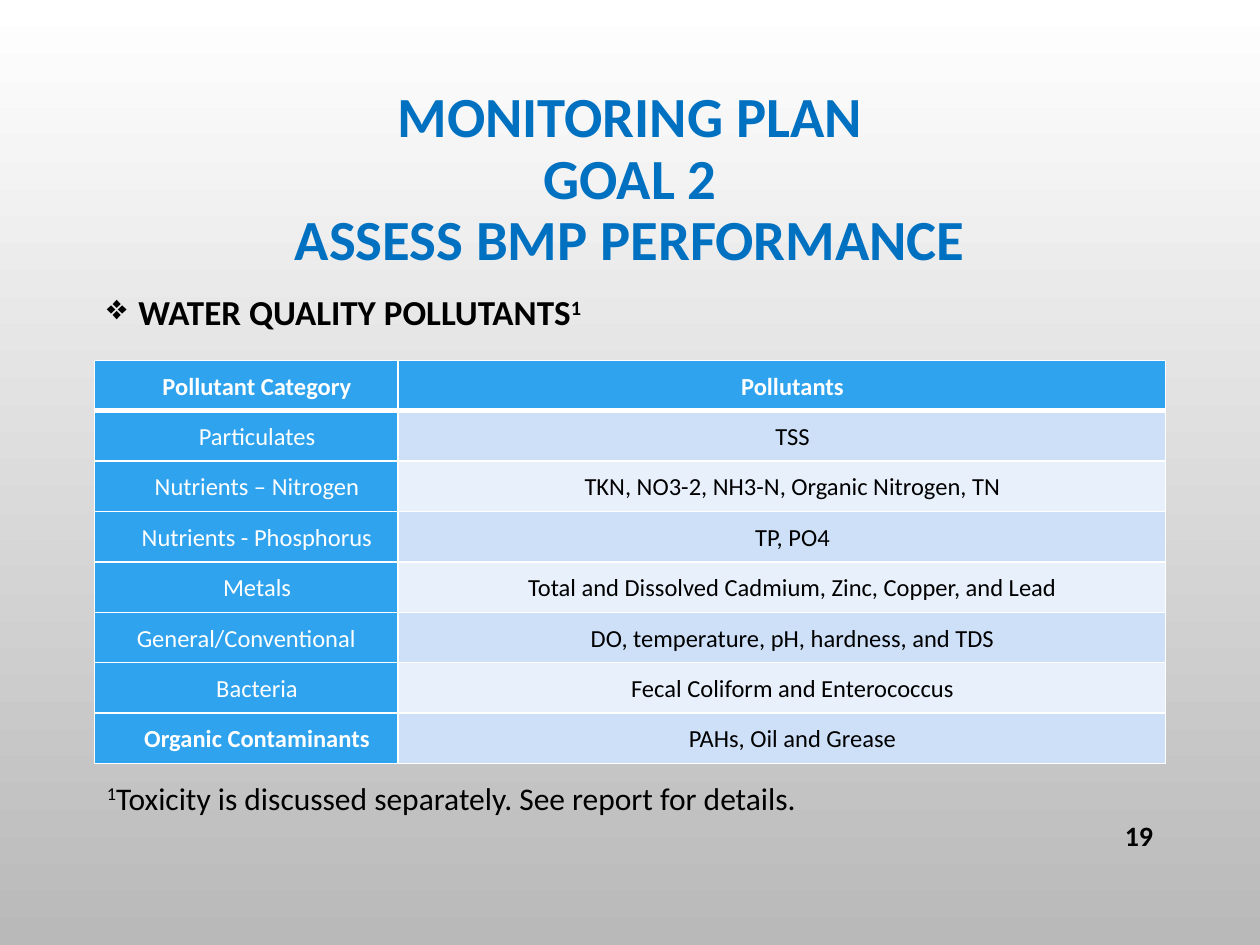
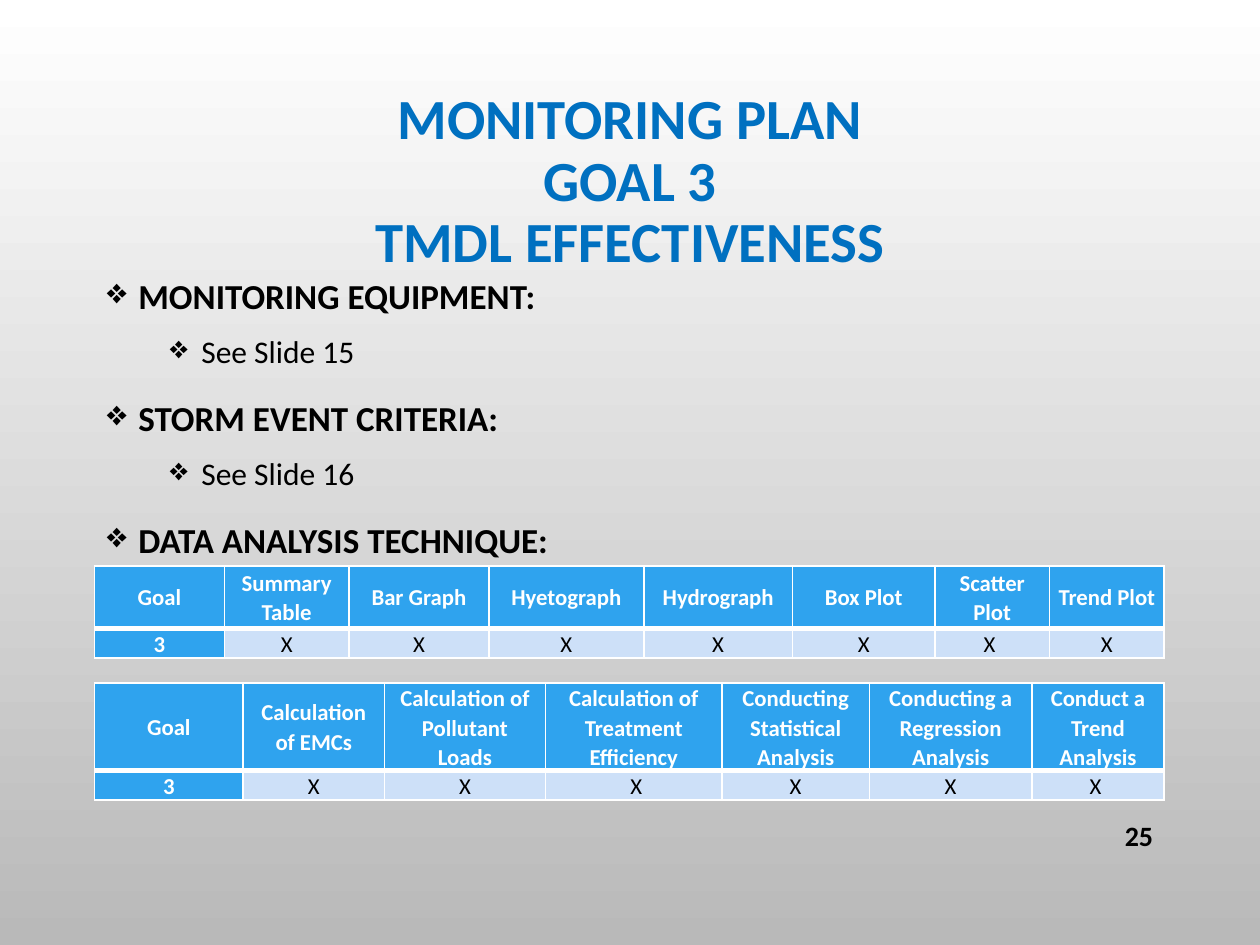
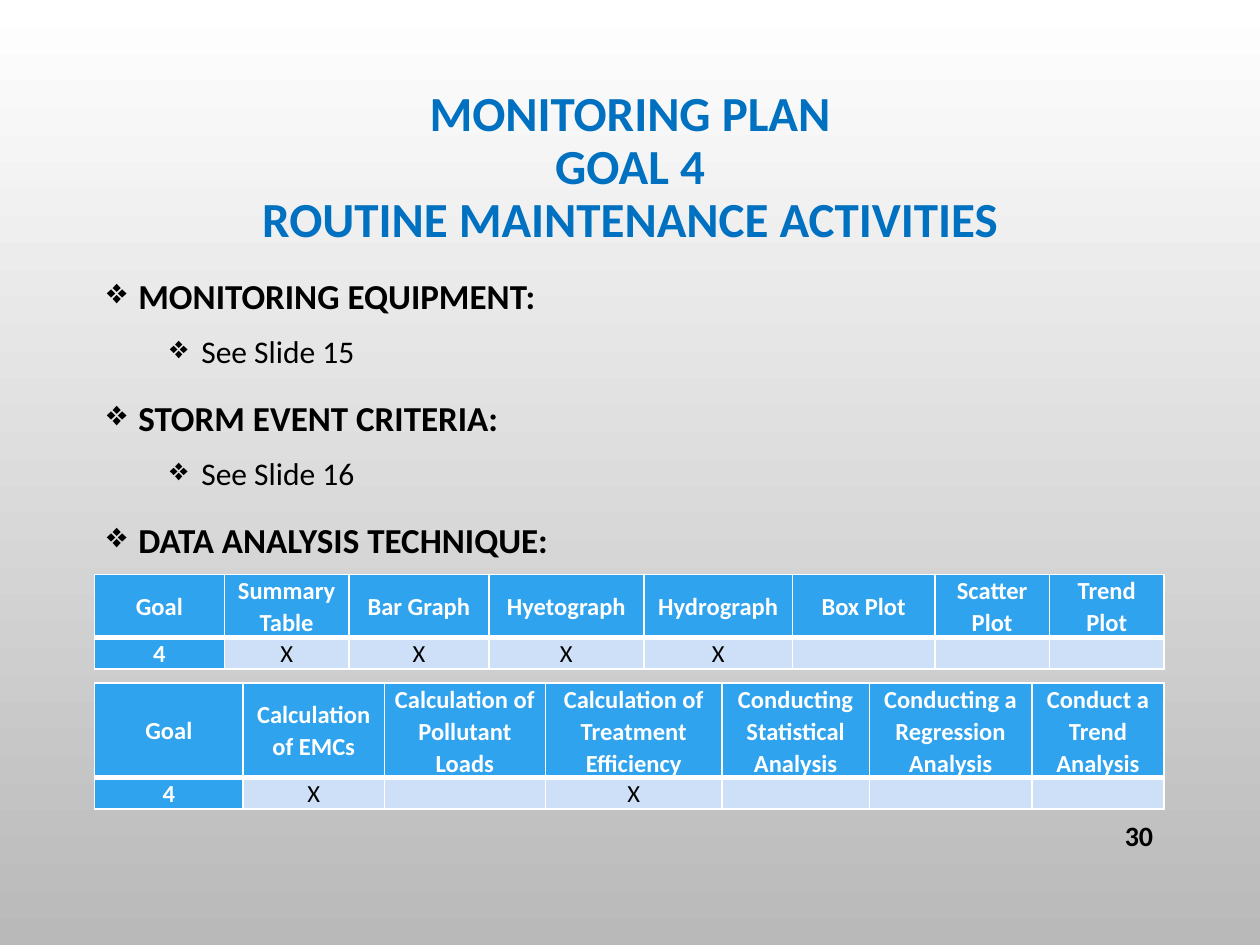
import copy

import pptx
import pptx.dml.color
import pptx.enum.text
import pptx.oxml.ns
import pptx.oxml.xmlchemy
import pptx.util
from lxml import etree

PX = 9144  # 100 px to the inch
FONT = "Calibri"
COLORS = {
    "title": "0070C0", "text": "000000", "white": "FFFFFF", "header": "2FA3EE",
    "band": "CDE0F8", "band_light": "E8F0FC", "sky": "FFFFFF", "ground": "B9B9B9",
}
ALIGN = pptx.enum.text.PP_ALIGN
MIDDLE = pptx.enum.text.MSO_ANCHOR.MIDDLE
TOP = pptx.enum.text.MSO_ANCHOR.TOP
MARGIN, CONTENT_W = 75, 850

GRAPHS = ["Goal", "Summary Table", "Bar Graph", "Hyetograph", "Hydrograph", "Box Plot",
          "Scatter Plot", "Trend Plot"]
GRAPH_COLS = [103, 99, 111, 123, 118, 113, 91, 91]
CALCULATIONS = ["Goal", "Calculation of EMCs", "Calculation of Pollutant Loads",
                "Calculation of Treatment Efficiency", "Conducting Statistical Analysis",
                "Conducting a Regression Analysis", "Conduct a Trend Analysis"]
CALCULATION_COLS = [118, 112, 128, 140, 117, 129, 105]
POLLUTANTS = [
    ("Pollutant Category", "Pollutants"),
    ("Particulates", "TSS"),
    ("Nutrients – Nitrogen", "TKN, NO3-2, NH3-N, Organic Nitrogen, TN"),
    ("Nutrients - Phosphorus", "TP, PO4"),
    ("Metals", "Total and Dissolved Cadmium, Zinc, Copper, and Lead"),
    ("General/Conventional", "DO, temperature, pH, hardness, and TDS"),
    ("Bacteria", "Fecal Coliform and Enterococcus"),
    ("Organic Contaminants", "PAHs, Oil and Grease"),
]
OUTLINE = [
    (0, "MONITORING EQUIPMENT:"), (1, "See Slide 15"),
    (0, "STORM EVENT CRITERIA:"), (1, "See Slide 16"),
    (0, "DATA ANALYSIS TECHNIQUE:"),
]


def px(value):
    return pptx.util.Emu(value * PX)


def rgb(name):
    return pptx.dml.color.RGBColor.from_string(COLORS[name])


def apply(target, **values):
    for name, value in values.items():
        setattr(target, name, value)


def sub(parent, tag, **attributes):
    element = etree.SubElement(parent, pptx.oxml.ns.qn(tag))
    for name, value in attributes.items():
        element.set(name, str(value))
    return element


def style_run(run, size, color="text", bold=False, raised=False):
    apply(run.font, name=FONT, size=pptx.util.Pt(size), bold=bold)
    run.font.color.rgb = rgb(color)
    if raised:
        run.font._element.set("baseline", "30000")


def add_run(paragraph, text, **style):
    run = paragraph.add_run()
    run.text = text
    style_run(run, **style)


def set_up_background(master):
    fill = master.background.fill
    fill.gradient()
    fill.gradient_angle = 270
    for stop, name in zip(fill.gradient_stops, ("sky", "ground")):
        stop.color.rgb = rgb(name)


def add_title(slide, lines, height, size):
    title = slide.shapes.title
    apply(title, left=px(MARGIN), top=px(68), width=px(CONTENT_W), height=px(height))
    apply(title.text_frame, word_wrap=True, vertical_anchor=MIDDLE,
          auto_size=pptx.enum.text.MSO_AUTO_SIZE.NONE)
    paragraph = title.text_frame.paragraphs[0]
    paragraph.text = "\n".join(lines)
    apply(paragraph, alignment=ALIGN.CENTER, line_spacing=0.9)
    for run in paragraph.runs:
        style_run(run, size, "title", bold=True)
    # Line breaks take the size of the text around them
    for line_break in paragraph._p.findall(pptx.oxml.ns.qn("a:br")):
        line_break.insert(0, copy.deepcopy(paragraph.runs[0].font._element))


def add_text_frame(slide, box, anchor=TOP):
    frame = slide.shapes.add_textbox(*map(px, box)).text_frame
    apply(frame, word_wrap=True, vertical_anchor=anchor)
    return frame


def add_page_number(slide, number):
    paragraph = add_text_frame(slide, (862, 643, 63, 40), MIDDLE).paragraphs[0]
    paragraph.alignment = ALIGN.RIGHT
    add_run(paragraph, number, size=16, bold=True)


def add_outline(slide, box, items):
    frame = add_text_frame(slide, box)
    for index, (level, text) in enumerate(items):
        paragraph = frame.add_paragraph() if index else frame.paragraphs[0]
        props = paragraph._p.get_or_add_pPr()
        props.set("marL", str(px(25 + 50 * level)))
        props.set("indent", str(px(-25)))
        sub(sub(props, "a:buClr"), "a:srgbClr", val=COLORS["text"])
        sub(props, "a:buChar", char="❖")
        apply(paragraph, level=level, line_spacing=1.2)
        if index:
            paragraph.space_before = pptx.util.Pt(5 if level else 10)
        add_run(paragraph, text, size=18 if level else 20, bold=not level)
    return frame


def add_borders(cell, widths):
    props = cell._tc.get_or_add_tcPr()
    for side, width in widths.items():
        line = sub(props, "a:ln" + side, w=pptx.util.Pt(width))
        sub(sub(line, "a:solidFill"), "a:srgbClr", val=COLORS["white"])


def fill_cell(cell, text, fill, borders, size, color, bold):
    add_borders(cell, borders)
    cell.fill.solid()
    cell.fill.fore_color.rgb = rgb(fill)
    apply(cell, vertical_anchor=MIDDLE, margin_left=px(7), margin_right=px(7),
          margin_top=0, margin_bottom=0)
    paragraph = cell.text_frame.paragraphs[0]
    apply(paragraph, alignment=ALIGN.CENTER, line_spacing=1.07)
    if text:
        add_run(paragraph, text, size=size, color=color, bold=bold)
    else:
        paragraph._p.get_or_add_endParaRPr().set("sz", str(size * 100))
    return paragraph


def add_grid(slide, left, top, columns, heights, rows, size, bold_labels):
    """Table with a header row and a label column; returns its paragraphs by row."""
    table = slide.shapes.add_table(len(rows), len(columns), px(left), px(top),
                                   px(sum(columns)), px(sum(heights))).table
    for column, width in zip(table.columns, columns):
        column.width = px(width)
    for row, height in zip(table.rows, heights):
        row.height = px(height)
    paragraphs = []
    for r, row in enumerate(rows):
        # The header's thick lower edge also serves as the next row's top
        borders = {"L": 1, "R": 1, "B": 1} if r else {"L": 1, "R": 1, "T": 1, "B": 3}
        paragraphs.append([])
        for c, text in enumerate(row):
            heading = r == 0 or c == 0
            fill = "header" if heading else "band" if r % 2 else "band_light"
            bold = r == 0 or (c == 0 and text in bold_labels)
            paragraphs[r].append(fill_cell(table.cell(r, c), text, fill, borders, size,
                                           "white" if heading else "text", bold))
    return paragraphs


def new_slide(prs, title_lines, title_height, title_size, number):
    slide = prs.slides.add_slide(prs.slide_layouts[5])
    add_title(slide, ["MONITORING PLAN"] + title_lines, title_height, title_size)
    add_page_number(slide, number)
    return slide


def add_pollutant_slide(prs):
    slide = new_slide(prs, ["GOAL 2", "ASSESS BMP PERFORMANCE"], 151, 32.4, "19")
    heading = add_outline(slide, (MARGIN, 219, 537, 67), [(0, "WATER QUALITY POLLUTANTS")])
    add_run(heading.paragraphs[0], "1", size=20, bold=True, raised=True)
    grid = add_grid(slide, MARGIN, 286, [241, 609], [40] * len(POLLUTANTS), POLLUTANTS, 14,
                    ["Organic Contaminants"])
    for row, texts in zip(grid, POLLUTANTS):
        for paragraph, text in zip(row, texts):
            if text != "General/Conventional":
                paragraph._p.get_or_add_pPr().set("marL", str(px(17)))
    footnote = add_text_frame(slide, (MARGIN, 613, 580, 40)).paragraphs[0]
    add_run(footnote, "1", size=18, raised=True)
    add_run(footnote, "Toxicity is discussed separately. See report for details.", size=18)


def add_technique_slide(prs, goal, subject, title_height, title_size, number,
                        graphs_top, size, graph_marks, calculation_marks):
    slide = new_slide(prs, ["GOAL " + goal, subject], title_height, title_size, number)
    add_outline(slide, (MARGIN, 206, CONTENT_W, 428), OUTLINE)
    for top, columns, header_height, header, marks in (
            (graphs_top, GRAPH_COLS, 50, GRAPHS, graph_marks),
            (542, CALCULATION_COLS, 59, CALCULATIONS, calculation_marks)):
        grid = add_grid(slide, MARGIN, top, columns, [header_height, 20],
                        [header, [goal] + marks], size, [goal])
        grid[1][0].space_after = pptx.util.Pt(6)


def main():
    prs = pptx.Presentation()
    apply(prs, slide_width=px(1000), slide_height=px(750))
    set_up_background(prs.slide_master)
    add_pollutant_slide(prs)
    add_technique_slide(prs, "3", "TMDL EFFECTIVENESS", 154, 32.4, "25", 449, 13,
                        ["X", "X", "X", "X", "X", "X ", "X"],
                        ["X", "X", " X", "X", "X", "X "])
    add_technique_slide(prs, "4", "ROUTINE MAINTENANCE ACTIVITIES", 131, 28, "30", 456, 14,
                        ["X", "X", "X", "X", "", "", ""],
                        ["X", "", "X", "", "", ""])
    prs.save("out.pptx")


if __name__ == "__main__":
    main()
